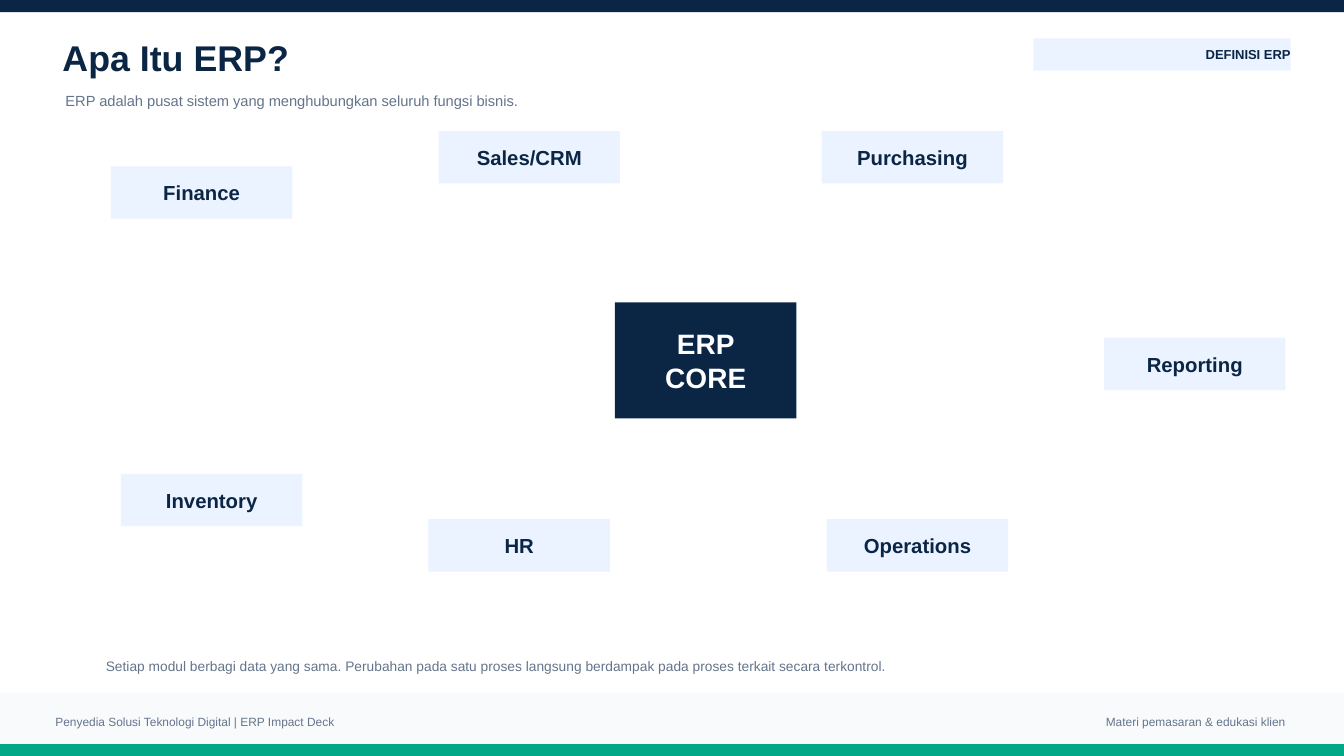
from dataclasses import dataclass

from pptx import Presentation
from pptx import util as u
from pptx.dml import color
from pptx.enum import shapes, text


@dataclass(frozen=True)
class Theme:
    font: str = "Arial"
    navy: str = "0B2545"
    green: str = "00A887"
    pale: str = "EAF3FF"
    band: str = "F8FAFC"
    grey: str = "64748B"
    white: str = "FFFFFF"
    title: float = 25.5
    core: float = 20
    module: float = 14.5
    subtitle: float = 10.5
    note: float = 9.8
    tag: float = 9.3
    footer: float = 8.5


THEME = Theme()
LEFT, CENTER, RIGHT = text.PP_ALIGN.LEFT, text.PP_ALIGN.CENTER, text.PP_ALIGN.RIGHT
WIDTH, HEIGHT = 13.33, 7.5
STRIPE = 0.12
MODULE_SIZE = (1.8, 0.52)
MODULES = {
    "Finance": (0.05, 0.35),
    "Inventory": (0.15, 3.4),
    "Sales/CRM": (3.3, 0),
    "HR": (3.2, 3.85),
    "Purchasing": (7.1, 0),
    "Operations": (7.15, 3.85),
    "Reporting": (9.9, 2.05),
}


def set_all(target, values):
    for name, value in values.items():
        setattr(target, name, value)


def write(shape, lines, size, ink, align=LEFT, bold=False):
    frame = shape.text_frame
    set_all(frame, {
        "word_wrap": True,
        "vertical_anchor": text.MSO_ANCHOR.MIDDLE,
        "margin_left": 0, "margin_top": 0, "margin_right": 0, "margin_bottom": 0,
    })
    frame.text = lines
    for paragraph in frame.paragraphs:
        paragraph.alignment = align
        set_all(paragraph.font, {"name": THEME.font, "size": u.Pt(size), "bold": bold})
        paragraph.font.color.rgb = color.RGBColor.from_string(ink)


def add_box(slide, box, fill):
    shape = slide.shapes.add_shape(shapes.MSO_SHAPE.RECTANGLE, *map(u.Inches, box))
    shape.shadow.inherit = False
    shape.fill.solid()
    shape.fill.fore_color.rgb = color.RGBColor.from_string(fill)
    shape.line.fill.background()
    return shape


def add_text(slide, box, lines, size, ink, align=LEFT, bold=False):
    label = slide.shapes.add_textbox(*map(u.Inches, box))
    write(label, lines, size, ink, align, bold)


def add_footer(slide, box):
    left, top, width, height = box
    add_box(slide, (left, top + height - STRIPE, width, STRIPE), THEME.green)
    add_box(slide, (left, top, width, height - STRIPE), THEME.band)
    for offset, label_width, label, align in (
        (0.55, 5.6, "Penyedia Solusi Teknologi Digital | ERP Impact Deck", LEFT),
        (8.45, 4.3, "Materi pemasaran & edukasi klien", RIGHT),
    ):
        add_text(slide, (left + offset, top + 0.2, label_width, 0.18),
                 label, THEME.footer, THEME.grey, align)


def add_header(slide, box):
    left, top, width, height = box
    add_box(slide, (left, top, width, STRIPE), THEME.navy)
    add_text(slide, (left + 0.62, top + 0.36, 9.4, 0.42),
             "Apa Itu ERP?", THEME.title, THEME.navy, bold=True)
    add_text(slide, (left + 0.65, top + height - 0.28, 10.2, 0.28),
             "ERP adalah pusat sistem yang menghubungkan seluruh fungsi bisnis.",
             THEME.subtitle, THEME.grey)
    tag = add_box(slide, (left + 10.25, top + 0.38, 2.55, 0.32), THEME.pale)
    write(tag, "DEFINISI ERP", THEME.tag, THEME.navy, RIGHT, True)


def add_module_map(slide, box):
    left, top, width, height = box
    core = add_box(slide, (left + 5.05, top + 1.7, 1.8, 1.15), THEME.navy)
    write(core, "ERP\nCORE", THEME.core, THEME.white, CENTER, True)
    for name, (across, down) in MODULES.items():
        module = add_box(slide, (left + across, top + down, *MODULE_SIZE), THEME.pale)
        write(module, name, THEME.module, THEME.navy, CENTER, True)
    add_text(slide, (left, top + height - 0.36, 11.1, 0.36),
             "Setiap modul berbagi data yang sama. Perubahan pada satu proses "
             "langsung berdampak pada proses terkait secara terkontrol.",
             THEME.note, THEME.grey)


def main():
    presentation = Presentation()
    set_all(presentation, {"slide_width": u.Inches(WIDTH), "slide_height": u.Inches(HEIGHT)})
    slide = presentation.slides.add_slide(presentation.slide_layouts[6])
    slide.background.fill.solid()
    slide.background.fill.fore_color.rgb = color.RGBColor.from_string(THEME.white)
    add_footer(slide, (0, 6.87, WIDTH, 0.63))
    add_header(slide, (0, 0, WIDTH, 1.14))
    add_module_map(slide, (1.05, 1.3, 11.7, 5.49))
    presentation.save("out.pptx")


if __name__ == "__main__":
    main()
